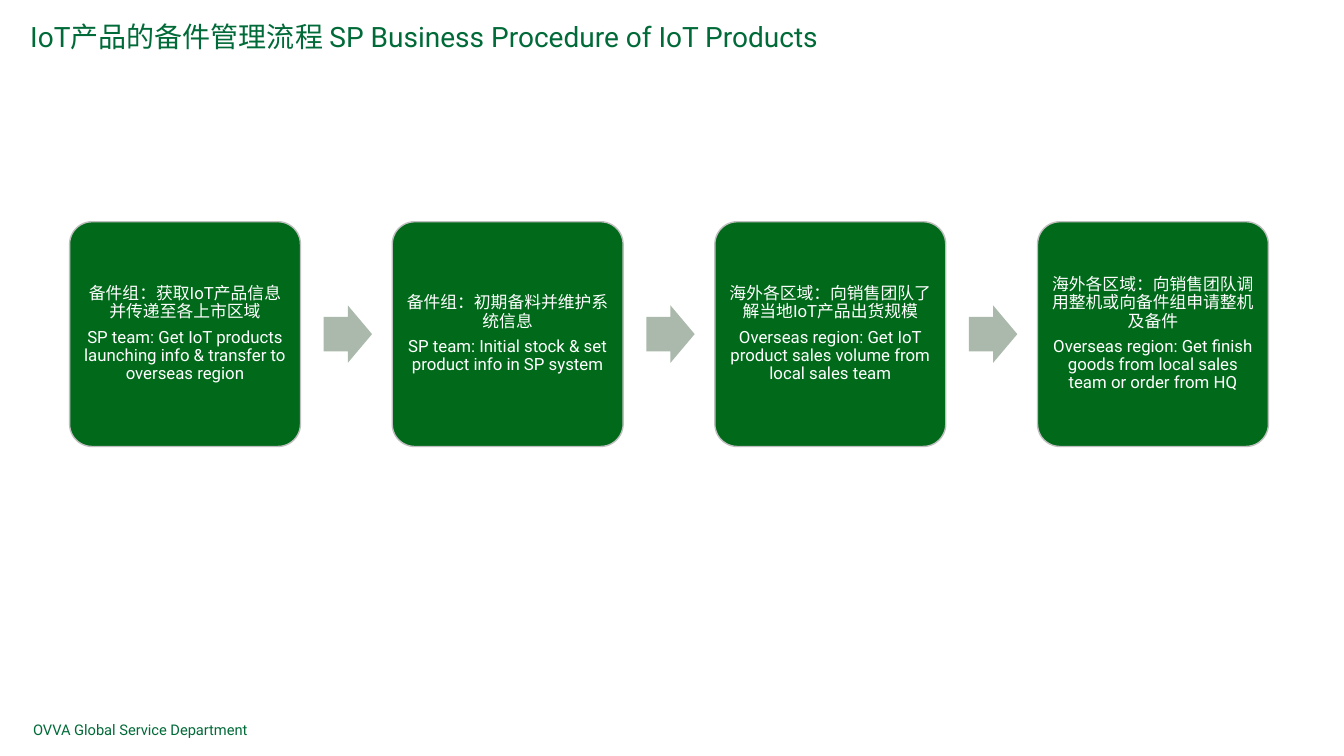
"""Build the spare-parts procedure slide for IoT products."""
from dataclasses import dataclass

from pptx import Presentation
from pptx.dml.color import RGBColor
from pptx.enum.shapes import MSO_SHAPE
from pptx.enum.text import MSO_ANCHOR, MSO_AUTO_SIZE, PP_ALIGN
from pptx.util import Emu, Pt

BOX, ARROW = MSO_SHAPE.ROUNDED_RECTANGLE, MSO_SHAPE.RIGHT_ARROW
MIDDLE, NO_FIT = MSO_ANCHOR.MIDDLE, MSO_AUTO_SIZE.NONE
LEFT, CENTER = PP_ALIGN.LEFT, PP_ALIGN.CENTER
PX = 9144
TITLE_ONLY = 5


@dataclass(frozen=True)
class Theme:
    """Hold the colours and type sizes of the slide."""

    font: str = "Roboto"
    green: str = "006A38"
    box: str = "006A1A"
    edge: str = "BFBFBF"
    arrow: str = "ABB9AC"
    white: str = "FFFFFF"
    title: float = 20
    step: float = 12
    foot: float = 10.5


THEME = Theme()
STEPS = [
    ("备件组：获取IoT产品信息并传递至各上市区域",
     "SP team: Get IoT products launching info & transfer to overseas region"),
    ("备件组：初期备料并维护系统信息",
     "SP team: Initial stock & set product info in SP system"),
    ("海外各区域：向销售团队了解当地IoT产品出货规模",
     "Overseas region: Get IoT product sales volume from local sales team"),
    ("海外各区域：向销售团队调用整机或向备件组申请整机及备件",
     "Overseas region: Get finish goods from local sales team or order from HQ"),
]
STEP_LEFT, STEP_TOP, STEP_WIDE, STEP_HIGH, PITCH = 69, 220, 229, 223, 320
ARROW_WIDE, ARROW_HIGH, ARROW_SHIFT = 48, 57, 252
STEP_PAD = 5


def px(*sizes):
    """Turn pixel lengths into EMU."""
    return [Emu(size * PX) for size in sizes]


def apply(item, values):
    """Set each named value on an item."""
    for name, value in values.items():
        setattr(item, name, value)


def write(frame, lines, size, color, layout, pad=None):
    """Fill a text frame with styled paragraphs."""
    apply(frame, {"word_wrap": True, "auto_size": NO_FIT,
                  "vertical_anchor": MIDDLE})
    if pad is not None:
        for side in ("left", "top", "right", "bottom"):
            setattr(frame, f"margin_{side}", px(pad)[0])
    frame.text = "\n".join(lines)
    for para in frame.paragraphs:
        apply(para, layout)
        for run in para.runs:
            apply(run.font, {"name": THEME.font, "size": Pt(size),
                             "bold": False})
            run.font.color.rgb = RGBColor.from_string(color)


def add_title(slide, text, place):
    """Place and style the slide title."""
    title = slide.shapes.title
    apply(title, dict(zip(("left", "top", "width", "height"), px(*place))))
    write(title.text_frame, [text], THEME.title, THEME.green,
          {"alignment": LEFT, "line_spacing": 0.9})


def add_foot(slide, text, place):
    """Add the department line."""
    box = slide.shapes.add_textbox(*px(*place))
    write(box.text_frame, [text], THEME.foot, THEME.green,
          {"alignment": LEFT})


def add_solid(slide, kind, place, fill, adjust, edge=None):
    """Add a flat filled shape with an optional outline."""
    shape = slide.shapes.add_shape(kind, *px(*place))
    shape.shadow.inherit = False
    shape.fill.solid()
    shape.fill.fore_color.rgb = RGBColor.from_string(fill)
    for index, value in enumerate(adjust):
        shape.adjustments[index] = value
    if edge:
        shape.line.color.rgb = RGBColor.from_string(edge)
        shape.line.width = Pt(1)
    else:
        shape.line.fill.background()
    return shape


def add_step(slide, left, lines):
    """Add one step box with its two languages."""
    place = left, STEP_TOP, STEP_WIDE, STEP_HIGH
    box = add_solid(slide, BOX, place, THEME.box, [0.1], THEME.edge)
    write(box.text_frame, lines, THEME.step, THEME.white,
          {"alignment": CENTER, "line_spacing": 0.9, "space_after": Pt(5)},
          STEP_PAD)


def add_arrow(slide, left):
    """Add the arrow that leads to the next step."""
    top = STEP_TOP + (STEP_HIGH - ARROW_HIGH) // 2
    place = left + ARROW_SHIFT, top, ARROW_WIDE, ARROW_HIGH
    add_solid(slide, ARROW, place, THEME.arrow, [0.6, 0.5])


def main():
    """Build and save the slide."""
    deck = Presentation()
    deck.slide_width, deck.slide_height = px(1333, 750)
    slide = deck.slides.add_slide(deck.slide_layouts[TITLE_ONLY])
    add_title(slide, "IoT产品的备件管理流程 SP Business Procedure of IoT Products",
              (20, 11, 1287, 54))
    for index, lines in enumerate(STEPS):
        left = STEP_LEFT + index * PITCH
        add_step(slide, left, lines)
        if index < len(STEPS) - 1:
            add_arrow(slide, left)
    add_foot(slide, "OVVA Global Service Department", (23, 704, 281, 40))
    deck.save("out.pptx")


if __name__ == "__main__":
    main()
